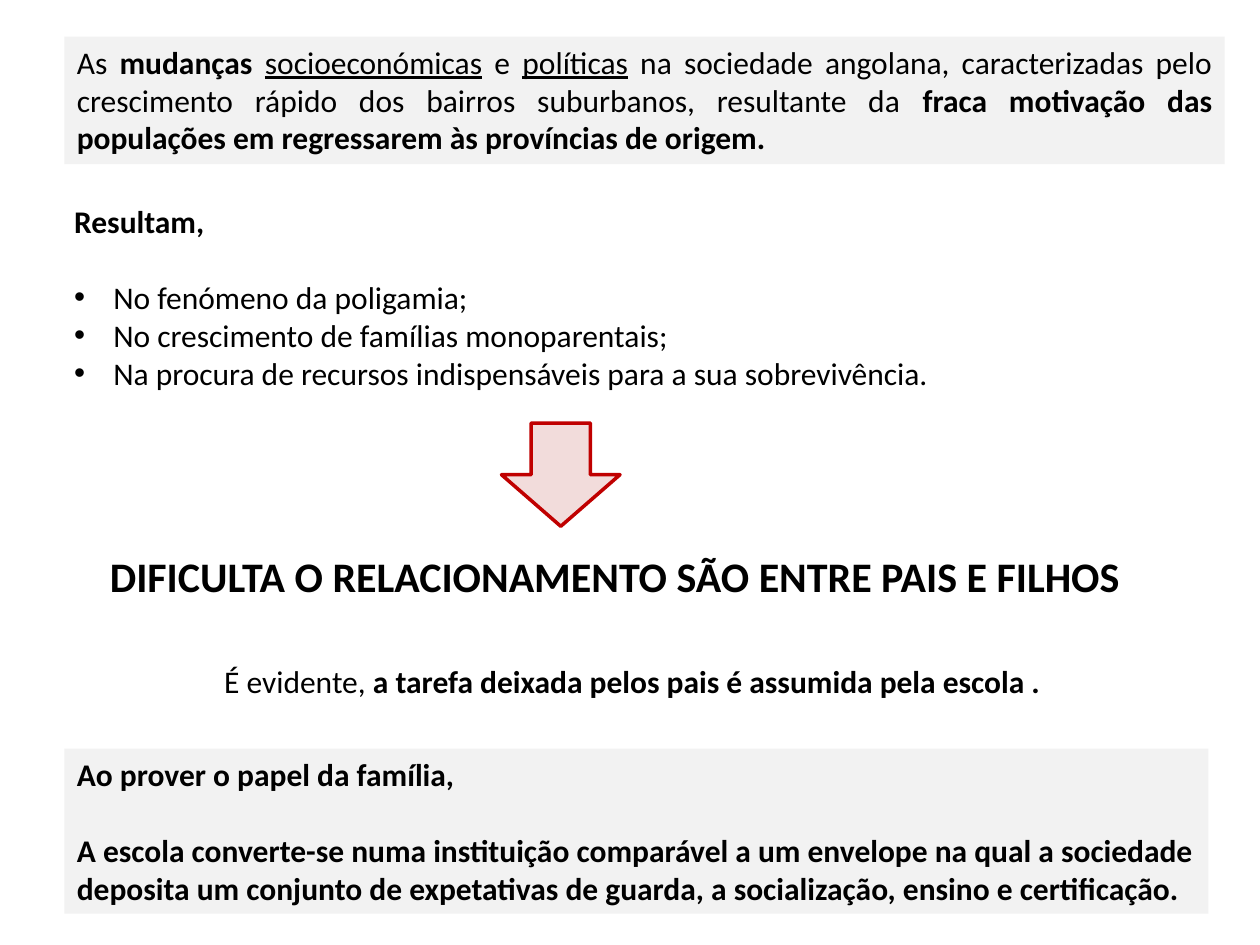
from dataclasses import dataclass

from lxml import etree
from pptx import Presentation
from pptx.dml.color import RGBColor
from pptx.enum.shapes import MSO_SHAPE
from pptx.enum.text import MSO_ANCHOR, MSO_AUTO_SIZE, PP_ALIGN
from pptx.oxml.ns import qn
from pptx.util import Cm, Pt

RECT, DOWN = MSO_SHAPE.RECTANGLE, MSO_SHAPE.DOWN_ARROW
LEFT, JUST = PP_ALIGN.LEFT, PP_ALIGN.JUSTIFY
TOP, FIXED = MSO_ANCHOR.TOP, MSO_AUTO_SIZE.NONE


@dataclass(frozen=True)
class Theme:
    font: str = "Calibri"
    ink: RGBColor = RGBColor(0, 0, 0)
    panel: RGBColor = RGBColor(0xF2, 0xF2, 0xF2)
    pink: RGBColor = RGBColor(0xF2, 0xDC, 0xDB)
    red: RGBColor = RGBColor(0xC0, 0, 0)
    head: Pt = Pt(24)
    body: Pt = Pt(18)
    gap: Pt = Pt(22)  # one empty line of body text


THEME = Theme()

# Each run is (text, style): "b" bold, "u" underlined
CAUSE = [
    ("As ", ""), ("mudanças ", "b"), ("socioeconómicas", "u"), (" e ", ""),
    ("políticas", "u"),
    (" na sociedade angolana, caracterizadas pelo crescimento rápido dos "
     "bairros suburbanos, resultante da ", ""),
    ("fraca motivação das populações em regressarem às províncias de origem.",
     "b"),
]
EFFECTS = [
    [("Resultam,", "b")],
    [("No fenómeno da poligamia;", "")],
    [("No crescimento de famílias monoparentais;", "")],
    [("Na procura de recursos indispensáveis para a sua sobrevivência.", "")],
]
CLAIM = [("DIFICULTA O RELACIONAMENTO SÃO ENTRE PAIS E FILHOS", "b")]
TASK = [("É evidente, ", ""),
        ("a tarefa deixada pelos pais é assumida pela escola .", "b")]
SCHOOL = [
    [("Ao prover o papel da família,", "b")],
    [("A escola converte-se numa instituição comparável a um envelope na qual "
      "a sociedade deposita um conjunto de expetativas de guarda, "
      "a socialização, ensino e certificação.", "b")],
]


def place(shape, box):
    shape.left, shape.top, shape.width, shape.height = map(Cm, box)


def write(shape, paras, size=THEME.body, align=LEFT):
    """Fill a shape with paragraphs; a gap follows the first one."""
    frame = shape.text_frame
    frame.word_wrap = True
    frame.auto_size = FIXED
    frame.vertical_anchor = TOP
    for i, parts in enumerate(paras):
        para = frame.add_paragraph() if i else frame.paragraphs[0]
        para.alignment = align
        para.space_before = THEME.gap if i == 1 else Pt(0)
        for text, style in parts:
            run = para.add_run()
            run.text = text
            font = run.font
            font.name, font.size = THEME.font, size
            font.color.rgb = THEME.ink
            font.bold = "b" in style
            font.underline = "u" in style


def bullet(para, mark):
    """Give a paragraph a hanging bullet, or none if mark is empty."""
    props = para._p.get_or_add_pPr()
    hang = Cm(0.79) if mark else 0
    props.set("marL", str(hang))
    props.set("indent", str(-hang))
    if mark:
        etree.SubElement(props, qn("a:buChar")).set("char", mark)
    else:
        etree.SubElement(props, qn("a:buNone"))


def block(slide, kind, box, fill, line=None):
    shape = slide.shapes.add_shape(kind, *map(Cm, box))
    shape.shadow.inherit = False
    shape.fill.solid()
    shape.fill.fore_color.rgb = fill
    if line is None:
        shape.line.fill.background()
    else:
        shape.line.color.rgb = line
        shape.line.width = Pt(2)
    return shape


def main():
    deck = Presentation()
    deck.slide_width, deck.slide_height = Cm(25.4), Cm(19.05)
    slide = deck.slides.add_slide(deck.slide_layouts[1])
    title, body = slide.placeholders

    # Causes
    cause = block(slide, RECT, (1.3, 0.74, 23.39, 2.57), THEME.panel)
    write(cause, [CAUSE], align=JUST)

    # Effects list
    place(body, (1.24, 3.94, 23.47, 4.11))
    write(body, EFFECTS, align=JUST)
    for i, para in enumerate(body.text_frame.paragraphs):
        bullet(para, "•" if i else "")

    # Arrow to the claim
    block(slide, DOWN, (10.11, 8.53, 2.39, 2.08), THEME.pink, THEME.red)
    place(title, (1.96, 10.97, 22, 1.27))
    write(title, [CLAIM], THEME.head)

    # Role of the school
    task = slide.shapes.add_textbox(*map(Cm, (4.27, 13.23, 17.4, 1.02)))
    write(task, [TASK])
    school = block(slide, RECT, (1.3, 15.09, 23.06, 3.33), THEME.panel)
    write(school, SCHOOL)

    deck.save("out.pptx")


if __name__ == "__main__":
    main()
